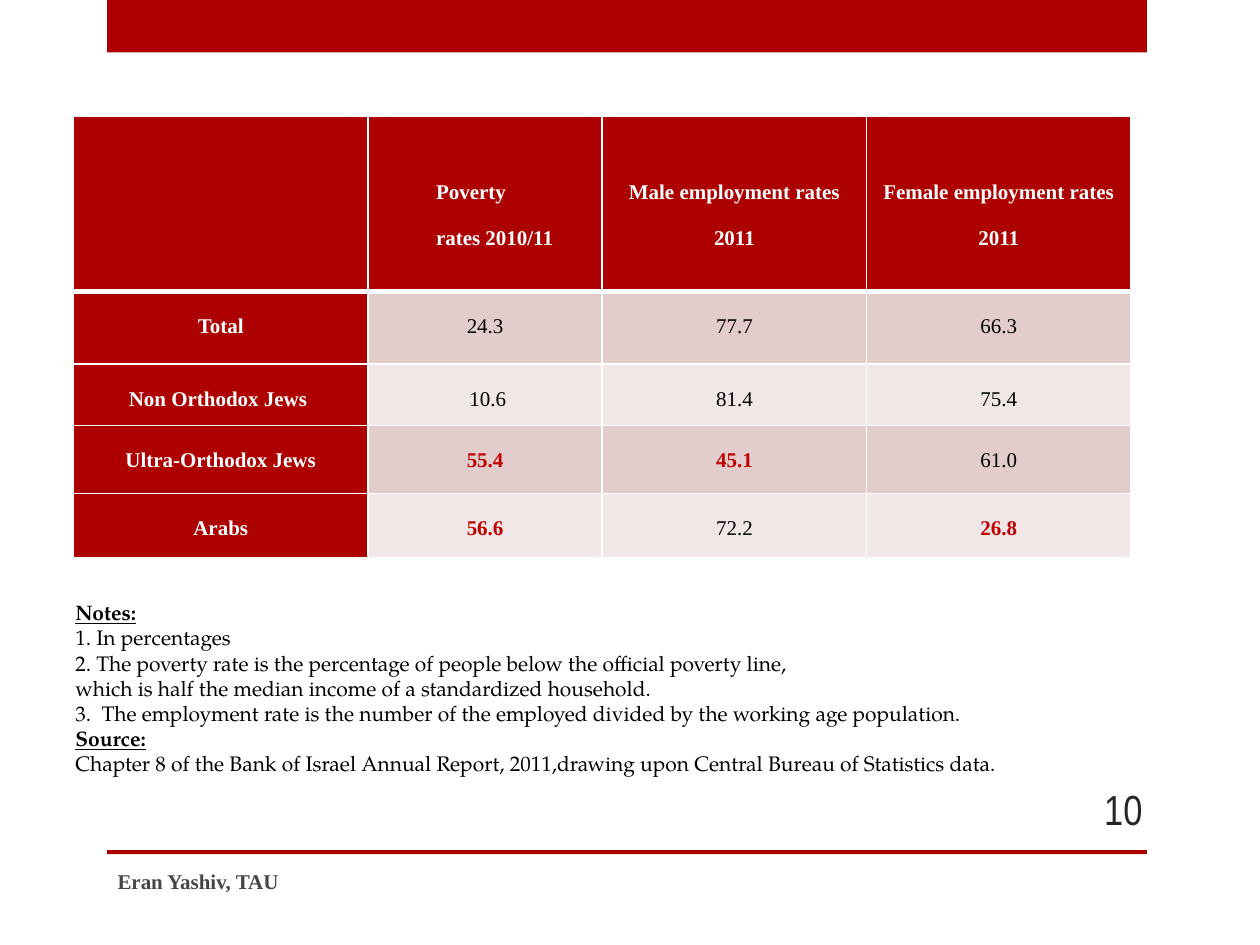
from lxml import etree
from pptx import Presentation
from pptx.dml.color import RGBColor
from pptx.enum.shapes import MSO_SHAPE
from pptx.enum.text import MSO_ANCHOR, PP_ALIGN
from pptx.oxml.ns import qn
from pptx.util import Cm, Pt

RECTANGLE = MSO_SHAPE.RECTANGLE
TOP, MIDDLE = MSO_ANCHOR.TOP, MSO_ANCHOR.MIDDLE
LEFT, CENTER, RIGHT = PP_ALIGN.LEFT, PP_ALIGN.CENTER, PP_ALIGN.RIGHT

RED, HIGHLIGHT, WHITE, BLACK = "AD0101", "C00000", "FFFFFF", "000000"
BANDS = ("E3CCCC", "F1E7E7")
SERIF, NOTES_FONT, NUMBER_FONT = "Times New Roman", "TeX Gyre Pagella", "Arial Narrow"
FIRST_LINE_INDENT = Cm(1.27)

COLUMN_WIDTHS = (5.94, 4.72, 5.33, 5.33)
ROW_HEIGHTS = (3.53, 1.47, 1.24, 1.37, 1.3)
ROWS = (
    ("", "Poverty\nrates 2010/11", "Male employment rates 2011", "Female employment rates 2011"),
    ("Total", "24.3", "77.7", "66.3"),
    ("Non Orthodox Jews ", "\N{NO-BREAK SPACE}10.6", "81.4", "75.4"),
    ("Ultra-Orthodox Jews", "55.4", "45.1", "61.0"),
    ("Arabs", "56.6", "72.2", "26.8"),
)
HIGHLIGHTED = {"55.4", "45.1", "56.6", "26.8"}
NOTES = (
    "Notes:",
    "1. In percentages",
    "2. The poverty rate is the percentage of people below the official poverty line,",
    "which is half the median income of a standardized household.",
    "3.  The employment rate is the number of the employed divided by the working age population.",
    "Source:",
    "Chapter 8 of the Bank of Israel Annual Report, 2011,drawing upon Central Bureau of Statistics data.",
)
NOTE_HEADINGS = {"Notes:", "Source:"}


def rgb(color):
    """Turn a hex string into a colour."""
    return RGBColor.from_string(color)


def style_paragraph(paragraph, font_name, size, color, bold=False, align=LEFT, indent=0):
    """Set the font, alignment and first-line indent of a paragraph."""
    font = paragraph.font
    font.name, font.size, font.bold = font_name, Pt(size), bold
    font.color.rgb = rgb(color)
    paragraph.alignment = align
    if indent:
        paragraph._p.get_or_add_pPr().set("indent", str(indent))


def add_bar(slide, left, top, width, height):
    """Add a plain red bar."""
    bar = slide.shapes.add_shape(RECTANGLE, Cm(left), Cm(top), Cm(width), Cm(height))
    bar.shadow.inherit = False
    bar.fill.solid()
    bar.fill.fore_color.rgb = rgb(RED)
    bar.line.fill.background()


def add_text_box(slide, left, top, width, height, anchor=MIDDLE):
    """Add a wrapping text box and return its text frame."""
    text_frame = slide.shapes.add_textbox(Cm(left), Cm(top), Cm(width), Cm(height)).text_frame
    text_frame.word_wrap = True
    text_frame.vertical_anchor = anchor
    return text_frame


def set_borders(cell, top_width, bottom_width):
    """Draw white borders around a cell."""
    properties = cell._tc.get_or_add_tcPr()
    widths = {"a:lnL": 1, "a:lnR": 1, "a:lnT": top_width, "a:lnB": bottom_width}
    for tag, width in widths.items():
        line = etree.SubElement(properties, qn(tag), w=str(Pt(width)))
        fill = etree.SubElement(line, qn("a:solidFill"))
        etree.SubElement(fill, qn("a:srgbClr"), val=WHITE)


def fill_cell(cell, text, row, column):
    """Write and format one table cell according to its place."""
    is_header, is_label = row == 0, column == 0
    set_borders(cell, 3 if row == 1 else 1, 3 if is_header else 1)
    cell.fill.solid()
    cell.fill.fore_color.rgb = rgb(RED if is_header or is_label else BANDS[(row - 1) % 2])
    cell.margin_left = cell.margin_right = Cm(0.1)
    cell.margin_top = cell.margin_bottom = 0
    cell.vertical_anchor = MIDDLE if is_header else TOP
    cell.text = text
    color = WHITE if is_header or is_label else HIGHLIGHT if text in HIGHLIGHTED else BLACK
    indented = is_header and column == 1
    for paragraph in cell.text_frame.paragraphs:
        style_paragraph(paragraph, SERIF, 12, color, color != BLACK,
                        LEFT if indented else CENTER, FIRST_LINE_INDENT if indented else 0)
        paragraph.line_spacing = 2.0


def add_rates_table(slide, left, top):
    """Add the table of poverty and employment rates."""
    table = slide.shapes.add_table(
        len(ROW_HEIGHTS), len(COLUMN_WIDTHS), Cm(left), Cm(top),
        Cm(sum(COLUMN_WIDTHS)), Cm(sum(ROW_HEIGHTS))).table
    for column, width in zip(table.columns, COLUMN_WIDTHS):
        column.width = Cm(width)
    for row, height in zip(table.rows, ROW_HEIGHTS):
        row.height = Cm(height)
    for row, texts in enumerate(ROWS):
        for column, text in enumerate(texts):
            fill_cell(table.cell(row, column), text, row, column)


def add_notes_block(slide, left, top, width, height):
    """Add the notes and the source under the table."""
    text_frame = add_text_box(slide, left, top, width, height, TOP)
    text_frame.margin_top = Cm(0.28)
    text_frame.text = "\n".join(NOTES)
    for paragraph in text_frame.paragraphs:
        is_heading = paragraph.text in NOTE_HEADINGS
        style_paragraph(paragraph, NOTES_FONT, 12, BLACK, is_heading, indent=FIRST_LINE_INDENT)
        paragraph.font.underline = is_heading


def add_frame(slide, left, width):
    """Add the top band, the bottom rule, the footer and the page number."""
    add_bar(slide, left, 0, width, 1.06)
    add_bar(slide, left, 17.14, width, 0.08)
    footer = add_text_box(slide, left - 0.04, 17.25, 13.54, 1.02)
    footer.text = "Eran Yashiv, TAU"
    style_paragraph(footer.paragraphs[0], SERIF, 12, "454545", True)
    number = add_text_box(slide, left + width - 1.96, 15.8, 2.12, 1.02)
    number.text = "10"
    style_paragraph(number.paragraphs[0], NUMBER_FONT, 24, "262626", align=RIGHT)


def main():
    """Build and save the slide."""
    presentation = Presentation()
    presentation.slide_width, presentation.slide_height = Cm(25.4), Cm(19.05)
    slide = presentation.slides.add_slide(presentation.slide_layouts[6])
    add_frame(slide, 2.16, 20.96)
    add_rates_table(slide, 1.48, 2.34)
    add_notes_block(slide, 0, 11.81, 25.4, 5.38)
    presentation.save("out.pptx")


if __name__ == "__main__":
    main()
